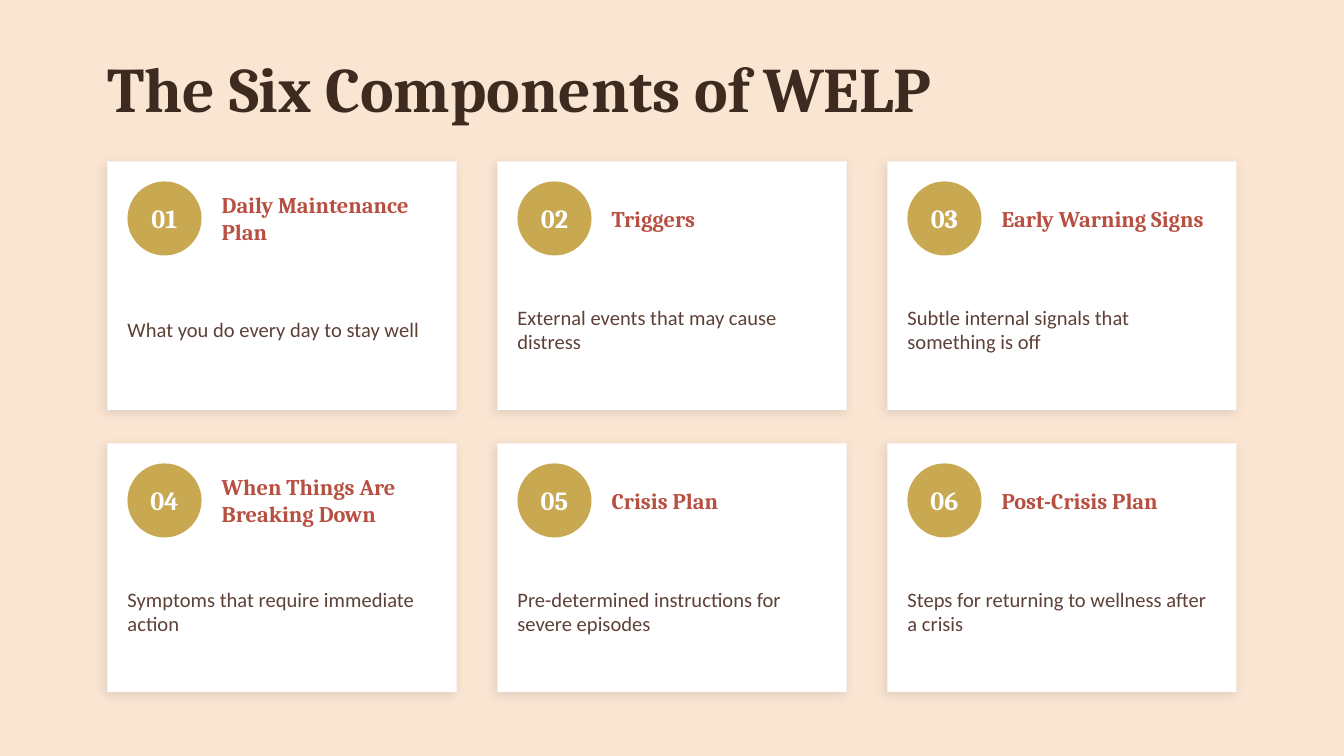
from lxml.etree import SubElement
from pptx import Presentation
from pptx.dml.color import RGBColor
from pptx.enum.shapes import MSO_SHAPE as Shape
from pptx.enum.text import MSO_ANCHOR as Anchor, MSO_AUTO_SIZE as AutoSize, PP_ALIGN as Align
from pptx.oxml.ns import qn
from pptx.util import Cm, Pt

PEACH = RGBColor(0xFA, 0xE5, 0xD3)
WHITE = RGBColor(0xFF, 0xFF, 0xFF)
GOLD = RGBColor(0xC8, 0xA9, 0x51)
DARK_BROWN = RGBColor(0x3D, 0x2B, 0x1F)
BROWN = RGBColor(0x5D, 0x40, 0x37)
TERRACOTTA = RGBColor(0xB8, 0x50, 0x42)

SERIF, SANS = "Cambria", "Calibri"

# Card grid
COLUMNS = 3
LEFT, TOP = Cm(2.03), Cm(3.05)
CARD_WIDTH, CARD_HEIGHT = Cm(6.6), Cm(4.7)
COLUMN_STEP, ROW_STEP = Cm(7.37), Cm(5.33)
PADDING, BADGE = Cm(0.38), Cm(1.4)

COMPONENTS = [
    ("Daily Maintenance Plan", "What you do every day to stay well"),
    ("Triggers", "External events that may cause distress"),
    ("Early Warning Signs", "Subtle internal signals that something is off"),
    ("When Things Are\nBreaking Down", "Symptoms that require immediate action"),
    ("Crisis Plan", "Pre-determined instructions for severe episodes"),
    ("Post-Crisis Plan", "Steps for returning to wellness after a crisis"),
]


def write(holder, text, size, color, font=SERIF, bold=True, align=Align.LEFT):
    """Fill a text holder with vertically centred text and no insets."""
    frame = holder.text_frame
    frame.text = text
    frame.word_wrap = True
    frame.auto_size = AutoSize.NONE
    frame.vertical_anchor = Anchor.MIDDLE
    frame.margin_left = frame.margin_right = frame.margin_top = frame.margin_bottom = 0
    for paragraph in frame.paragraphs:
        paragraph.alignment = align
        for run in paragraph.runs:
            run.font.name, run.font.size, run.font.bold = font, Pt(size), bold
            run.font.color.rgb = color


def add_filled(slide, preset, left, top, width, height, color):
    filled = slide.shapes.add_shape(preset, left, top, width, height)
    filled.fill.solid()
    filled.fill.fore_color.rgb = color
    filled.line.fill.background()
    filled.shadow.inherit = False
    return filled


def add_soft_shadow(card):
    """Cast a faint black shadow to the lower left."""
    effects = card._element.spPr.find(qn("a:effectLst"))
    shadow = SubElement(effects, qn("a:outerShdw"), blurRad=str(Pt(6)), dist=str(Pt(2)),
                        dir=str(135 * 60000), algn="bl", rotWithShape="0")
    black = SubElement(shadow, qn("a:srgbClr"), val="000000")
    SubElement(black, qn("a:alpha"), val="10000")


def add_title(slide, text):
    title = slide.shapes.title
    title.left, title.top, title.width, title.height = LEFT, Cm(0.76), Cm(21.34), Cm(1.78)
    write(title, text, 34, DARK_BROWN)


def add_component(slide, index, name, description):
    row, column = divmod(index, COLUMNS)
    left, top = LEFT + column * COLUMN_STEP, TOP + row * ROW_STEP
    inner_left, inner_top = left + PADDING, top + PADDING

    # Card
    card = add_filled(slide, Shape.RECTANGLE, left, top, CARD_WIDTH, CARD_HEIGHT, WHITE)
    add_soft_shadow(card)

    # Numbered badge
    badge = add_filled(slide, Shape.OVAL, inner_left, inner_top, BADGE, BADGE, GOLD)
    write(badge, f"{index + 1:02}", 14, WHITE, align=Align.CENTER)

    # Name and description
    heading = slide.shapes.add_textbox(
        inner_left + BADGE + PADDING, inner_top, Cm(3.94), BADGE)
    write(heading, name, 12, TERRACOTTA)
    summary = slide.shapes.add_textbox(inner_left, top + Cm(2.16), Cm(5.84), Cm(2.03))
    write(summary, description, 11, BROWN, SANS, bold=False)


def main():
    deck = Presentation()
    deck.slide_width, deck.slide_height = Cm(25.4), Cm(14.29)
    slide = deck.slides.add_slide(deck.slide_layouts[5])
    slide.background.fill.solid()
    slide.background.fill.fore_color.rgb = PEACH

    add_title(slide, "The Six Components of WELP")
    for index, (name, description) in enumerate(COMPONENTS):
        add_component(slide, index, name, description)

    deck.save("out.pptx")


if __name__ == "__main__":
    main()
